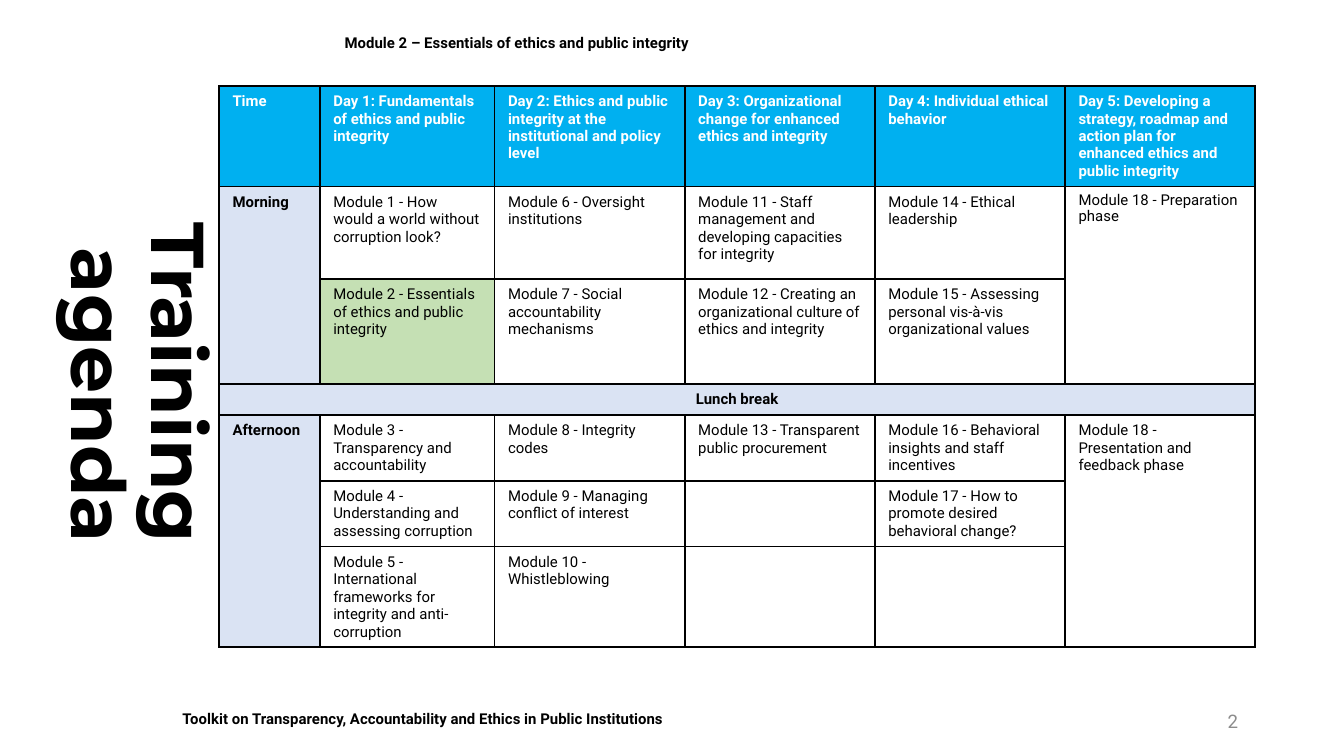
from lxml.etree import SubElement
from pptx import Presentation
from pptx.dml.color import RGBColor
from pptx.enum.text import MSO_ANCHOR, PP_ALIGN
from pptx.oxml.ns import qn
from pptx.util import Inches, Pt

BLACK = RGBColor(0x00, 0x00, 0x00)
WHITE = RGBColor(0xFF, 0xFF, 0xFF)
GREY = RGBColor(0x8C, 0x8C, 0x8C)
BLUE = RGBColor(0x00, 0xB0, 0xF0)
PALE_BLUE = RGBColor(0xDA, 0xE3, 0xF3)
GREEN = RGBColor(0xC5, 0xE0, 0xB4)

COLUMN_SHARES = [7.5, 13] + [14.15] * 4
ROW_SHARES = [13.3, 12.25, 13.9, 4.1, 8.7, 8.7, 13.3]
HEADER_ROW, LUNCH_ROW = 0, 3
TIME_COLUMN = 0
CURRENT_MODULE = (2, 1)
MERGES = [
    ((1, 0), (2, 0)),
    ((1, 5), (2, 5)),
    ((3, 0), (3, 5)),
    ((4, 0), (6, 0)),
    ((4, 5), (6, 5)),
]
AGENDA = [
    ["Time",
     "Day 1: Fundamentals of ethics and public integrity",
     "Day 2: Ethics and public integrity at the institutional and policy level",
     "Day 3: Organizational change for enhanced ethics and integrity",
     "Day 4: Individual ethical behavior",
     "Day 5: Developing a strategy, roadmap and action plan for enhanced ethics and public integrity"],
    ["Morning",
     "Module 1 - How would a world without corruption look?",
     "Module 6 - Oversight institutions",
     "Module 11 - Staff management and developing capacities for integrity",
     "Module 14 - Ethical leadership",
     "Module 18 - Preparation phase"],
    ["",
     "Module 2 - Essentials of ethics and public integrity",
     "Module 7 - Social accountability mechanisms",
     "Module 12 - Creating an organizational culture of ethics and integrity",
     "Module 15 - Assessing personal vis-à-vis organizational values",
     ""],
    ["Lunch break", "", "", "", "", ""],
    ["Afternoon",
     "Module 3 - Transparency and accountability",
     "Module 8 - Integrity codes",
     "Module 13 - Transparent public procurement",
     "Module 16 - Behavioral insights and staff incentives",
     "Module 18 - Presentation and feedback phase"],
    ["",
     "Module 4 - Understanding and assessing corruption",
     "Module 9 - Managing conflict of interest",
     "",
     "Module 17 - How to promote desired behavioral change?",
     ""],
    ["",
     "Module 5 - International frameworks for integrity and anti-corruption",
     "Module 10 - Whistleblowing",
     "", "", ""],
]


class AgendaSlide:
    body_font = "Roboto"
    title_font = "Montserrat"
    body_size = 8

    def __init__(self, presentation):
        self.width = presentation.slide_width
        self.height = presentation.slide_height
        self.slide = presentation.slides.add_slide(presentation.slide_layouts[6])

    def across(self, percent):
        return round(self.width * percent / 100)

    def down(self, percent):
        return round(self.height * percent / 100)

    def style(self, paragraph, size=body_size, color=BLACK, bold=True,
              align=PP_ALIGN.LEFT, name=body_font):
        paragraph.alignment = align
        paragraph.font.name = name
        paragraph.font.size = Pt(size)
        paragraph.font.bold = bold
        paragraph.font.color.rgb = color

    def text(self, content, left, top, width, height,
             anchor=MSO_ANCHOR.MIDDLE, **style):
        shape = self.slide.shapes.add_textbox(
            self.across(left), self.down(top), self.across(width), self.down(height))
        frame = shape.text_frame
        frame.word_wrap = True
        frame.vertical_anchor = anchor
        frame.text = content
        self.style(frame.paragraphs[0], **style)
        return shape

    def vertical_title(self, content, left, top, width, height):
        shape = self.text(content, left, top, width, height, size=40,
                          align=PP_ALIGN.RIGHT, name=self.title_font)
        frame = shape.text_frame
        frame.paragraphs[0].line_spacing = 0.9
        frame.margin_left = Inches(0.16)
        frame.margin_bottom = Inches(1.03)
        frame._txBody.bodyPr.set("vert", "vert")

    def border(self, cell):
        properties = cell._tc.get_or_add_tcPr()
        for side in ("a:lnL", "a:lnR", "a:lnT", "a:lnB"):
            line = SubElement(properties, qn(side), w=str(Pt(1)))
            fill = SubElement(line, qn("a:solidFill"))
            SubElement(fill, qn("a:srgbClr"), val=str(BLACK))

    def cell(self, cell, content, fill, **style):
        cell.text = content
        cell.margin_bottom = Inches(0.03)
        self.style(cell.text_frame.paragraphs[0], **style)
        self.border(cell)
        if fill is None:
            cell.fill.background()
        else:
            cell.fill.solid()
            cell.fill.fore_color.rgb = fill

    def agenda(self, left, top):
        table = self.slide.shapes.add_table(
            len(ROW_SHARES), len(COLUMN_SHARES), self.across(left), self.down(top),
            self.across(sum(COLUMN_SHARES)), self.down(sum(ROW_SHARES))).table
        table.first_row = table.horz_banding = False
        for column, share in zip(table.columns, COLUMN_SHARES):
            column.width = self.across(share)
        for row, share in zip(table.rows, ROW_SHARES):
            row.height = self.down(share)
        for row, contents in enumerate(AGENDA):
            for column, content in enumerate(contents):
                header = row == HEADER_ROW
                label = row == LUNCH_ROW or column == TIME_COLUMN
                fill = BLUE if header else PALE_BLUE if label else None
                if (row, column) == CURRENT_MODULE:
                    fill = GREEN
                self.cell(table.cell(row, column), content, fill,
                          color=WHITE if header else BLACK,
                          bold=header or label,
                          align=PP_ALIGN.CENTER if row == LUNCH_ROW else PP_ALIGN.LEFT)
        for first, last in MERGES:
            table.cell(*first).merge(table.cell(*last))
        table.cell(1, 5).text_frame.paragraphs[0].line_spacing = 0.9


def main():
    presentation = Presentation()
    presentation.slide_width = Inches(10)
    presentation.slide_height = presentation.slide_width * 9 // 16
    slide = AgendaSlide(presentation)
    footer = slide.text(
        "Toolkit on Transparency, Accountability and Ethics in Public Institutions",
        12.6, 93, 71.7, 4.27, anchor=MSO_ANCHOR.TOP)
    footer.fill.solid()
    footer.fill.fore_color.rgb = WHITE
    slide.vertical_title("Training agenda", 2.8, 11.38, 13.5, 78.76)
    slide.text("2", 70.6, 92.7, 22.5, 5.34, size=10, color=GREY, bold=False,
               align=PP_ALIGN.RIGHT)
    slide.text("Module 2 – Essentials of ethics and public integrity",
               24.65, 1.78, 68.5, 7.82)
    slide.agenda(16.3, 11.38)
    presentation.save("out.pptx")


if __name__ == "__main__":
    main()
